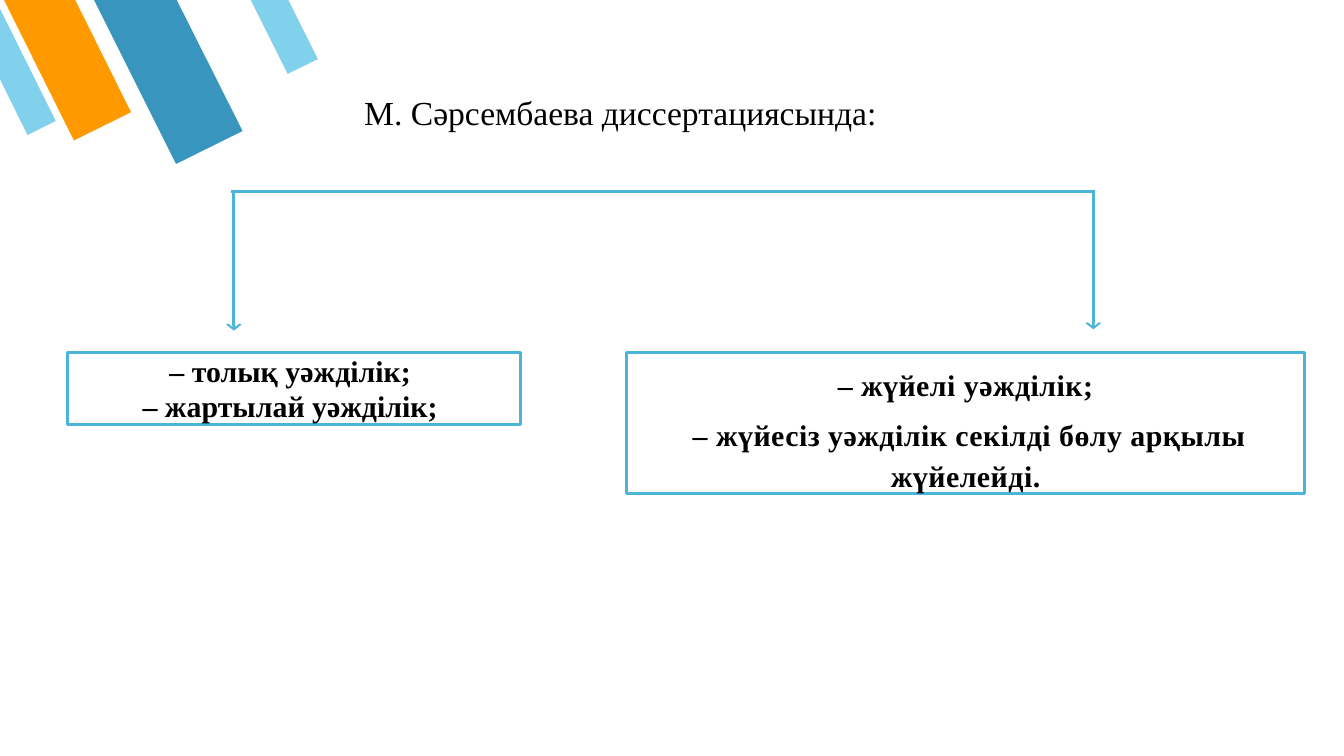
"""Builds a slide that splits motivation kinds into two boxes."""
from lxml.etree import SubElement
from pptx import Presentation
from pptx.dml.color import RGBColor
from pptx.enum.shapes import MSO_CONNECTOR as LINK, MSO_SHAPE as SHAPE
from pptx.enum.text import MSO_ANCHOR as ANCHOR, MSO_AUTO_SIZE as FIT, PP_ALIGN as ALIGN
from pptx.oxml.ns import qn
from pptx.util import Pt

PX = 9144
FONT = "Times New Roman"
BLACK = RGBColor(0x00, 0x00, 0x00)
ORANGE = RGBColor(0xFF, 0x99, 0x00)
BLUE = RGBColor(0x37, 0x95, 0xBE)
PALE = RGBColor(0x81, 0xD0, 0xEC)
SKY = RGBColor(0x4A, 0xB4, 0xD9)

STRIPES = [
    (ORANGE, [(195, 167), (110, 209), (6, 0), (112, 0)]),
    (BLUE, [(361, 195), (262, 244), (140, 0), (263, 0)]),
    (PALE, [(428, 110), (373, 0), (429, 0), (473, 88)]),
    (PALE, [(0, 13), (83, 180), (41, 201), (0, 118)]),
]


def add_stripe(slide, color, points):
    """Draw one filled slanted stripe."""
    pen = slide.shapes.build_freeform(*points[0], scale=PX)
    pen.add_line_segments(points[1:], close=True)
    stripe = pen.convert_to_shape()
    stripe.shadow.inherit = False
    stripe.fill.solid()
    stripe.fill.fore_color.rgb = color
    stripe.line.fill.background()


def add_line(slide, x1, y1, x2, y2, arrow=False):
    """Draw a straight line, with an open arrowhead if asked."""
    ends = [n * PX for n in (x1, y1, x2, y2)]
    line = slide.shapes.add_connector(LINK.STRAIGHT, *ends)
    line.line.color.rgb = SKY
    line.line.width = Pt(3)
    if arrow:
        SubElement(line.line._get_or_add_ln(), qn("a:tailEnd"),
                   type="arrow", w="lg", len="sm")
    SubElement(line._element.spPr, qn("a:effectLst"))


def set_frame(frame, top=0):
    """Give a text frame its margins, wrap and anchor."""
    frame.margin_left = frame.margin_right = frame.margin_bottom = 0
    frame.margin_top = top * PX
    frame.word_wrap = True
    frame.auto_size = FIT.NONE
    frame.vertical_anchor = ANCHOR.TOP


def add_text(para, text, size, bold, align, space):
    """Add one formatted run to a paragraph."""
    para.alignment = align
    para.line_spacing = space
    run = para.add_run()
    run.text = text
    font = run.font
    font.name, font.size, font.bold = FONT, Pt(size), bold
    font.color.rgb = BLACK
    return run


def add_title(slide, text, left, top, width, height):
    """Place and fill the title."""
    title = slide.shapes.title
    title.left, title.top = left * PX, top * PX
    title.width, title.height = width * PX, height * PX
    set_frame(title.text_frame, 1)
    add_text(title.text_frame.paragraphs[0], text, 36, False, ALIGN.LEFT, 1.17)


def add_box(slide, left, width, height, items, top=0, space=1.0, gap=0, track=0):
    """Draw an outlined box with centred lines of text."""
    box = slide.shapes.add_shape(SHAPE.RECTANGLE, left * PX, 524 * PX,
                                 width * PX, height * PX)
    box.shadow.inherit = False
    box.fill.background()
    box.line.color.rgb = SKY
    box.line.width = Pt(3.2)
    frame = box.text_frame
    set_frame(frame, top)
    for i, item in enumerate(items):
        para = frame.add_paragraph() if i else frame.paragraphs[0]
        run = add_text(para, item, 32, True, ALIGN.CENTER, space)
        if i:
            para.space_before = Pt(gap)
        if track:
            run._r.get_or_add_rPr().set("spc", str(track))


def main():
    """Build and save the slide."""
    deck = Presentation()
    deck.slide_width, deck.slide_height = 2000 * PX, 1125 * PX
    slide = deck.slides.add_slide(deck.slide_layouts[5])
    for color, points in STRIPES:
        add_stripe(slide, color, points)
    add_title(slide, "М. Сәрсембаева диссертациясында:", 542, 125, 1058, 66)
    add_line(slide, 344, 285, 1627, 285)
    add_line(slide, 1627, 283, 1627, 490, arrow=True)
    add_line(slide, 348, 285, 348, 492, arrow=True)
    add_box(slide, 100, 675, 108,
            ["– толық уәжділік; ", "– жартылай уәжділік; "])
    add_box(slide, 933, 1008, 211,
            ["– жүйелі уәжділік;",
             " – жүйесіз уәжділік секілді бөлу арқылы жүйелейді."],
            top=15, space=1.13, gap=10.4, track=50)
    deck.save("out.pptx")


if __name__ == "__main__":
    main()
